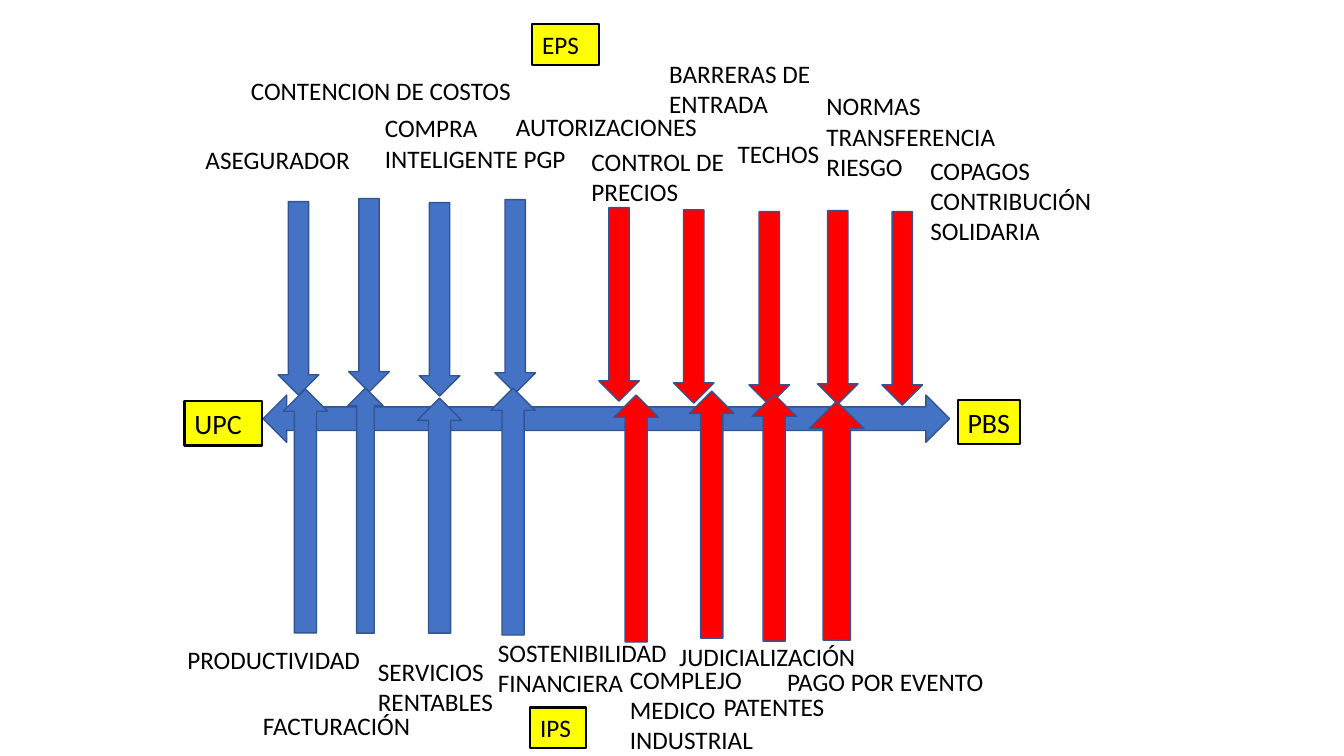
from dataclasses import dataclass

from pptx import Presentation
from pptx.dml.color import RGBColor
from pptx.enum.shapes import MSO_SHAPE
from pptx.enum.text import MSO_ANCHOR, MSO_AUTO_SIZE, PP_ALIGN
from pptx.util import Pt


@dataclass(frozen=True)
class Theme:
    font: str = "Calibri"
    label_size: float = 18
    end_size: float = 20
    ink: RGBColor = RGBColor(0x00, 0x00, 0x00)
    tag: RGBColor = RGBColor(0xFF, 0xFF, 0x00)
    blue: RGBColor = RGBColor(0x44, 0x72, 0xC4)
    red: RGBColor = RGBColor(0xFF, 0x00, 0x00)
    outline: RGBColor = RGBColor(0x32, 0x54, 0x91)
    arrow_line: float = 1
    tag_line: float = 1.5


@dataclass(frozen=True)
class Box:
    left: float
    top: float
    width: float
    height: float

    def inner(self, left, top, width, height):
        """Return a box placed relative to this one."""
        return Box(self.left + left, self.top + top, width, height)

    def lengths(self):
        return Pt(self.left), Pt(self.top), Pt(self.width), Pt(self.height)


THEME = Theme()
LINE_HEIGHT = 22
LABEL_PADDING = 7
LABEL_WIDTH = 147.5


def write_text(shape, text, size=THEME.label_size, color=THEME.ink, right_margin=7.2):
    frame = shape.text_frame
    frame.word_wrap = True
    frame.auto_size = MSO_AUTO_SIZE.SHAPE_TO_FIT_TEXT
    frame.vertical_anchor = MSO_ANCHOR.TOP
    frame.margin_right = Pt(right_margin)
    para = frame.paragraphs[0]
    para.alignment = PP_ALIGN.LEFT
    span = para.add_run()
    span.text = text
    span.font.name = THEME.font
    span.font.size = Pt(size)
    span.font.color.rgb = color


def add_block(page, kind, box, fill, line, line_width):
    shape = page.shapes.add_shape(kind, *box.lengths())
    shape.shadow.inherit = False
    shape.fill.solid()
    shape.fill.fore_color.rgb = fill
    shape.line.color.rgb = line
    shape.line.width = Pt(line_width)
    return shape


def add_arrow(page, kind, box, fill):
    return add_block(page, kind, box, fill, THEME.outline, THEME.arrow_line)


def add_tag(page, box, text, size=THEME.label_size):
    shape = add_block(page, MSO_SHAPE.RECTANGLE, box, THEME.tag, THEME.ink, THEME.tag_line)
    write_text(shape, text, size=size, right_margin=0)


def add_labels(page, box, labels):
    for text, left, top, lines, width in labels:
        place = box.inner(left, top, width, lines * LINE_HEIGHT + LABEL_PADDING)
        write_text(page.shapes.add_textbox(*place.lengths()), text)


def add_insurer_side(page, box):
    """Insurer measures pressing down on the axis."""
    blue_arrows = [(78.7, 127), (129.1, 124.8), (179.5, 127.7), (233.5, 125.6)]
    red_arrows = [(307.7, 131.3), (361, 132.8), (415, 134.2), (463.9, 133.5), (510, 134.2)]
    for fill, arrows in ((THEME.blue, blue_arrows), (THEME.red, red_arrows)):
        for left, top in arrows:
            add_arrow(page, MSO_SHAPE.DOWN_ARROW, box.inner(left, top, 29, 138.2), fill)

    add_tag(page, box.inner(260.2, 0.3, 47.5, 29), "EPS")
    add_labels(page, box, [
        ("ASEGURADOR", 19.7, 82.4, 1, 128.2),
        ("CONTENCION DE COSTOS", 52.1, 33.4, 1, 212.4),
        ("COMPRA INTELIGENTE PGP", 147.8, 60, 2, LABEL_WIDTH),
        ("AUTORIZACIONES", 241.4, 58.6, 1, LABEL_WIDTH),
        ("CONTROL DE PRECIOS", 295.4, 83.8, 2, LABEL_WIDTH),
        ("BARRERAS DE ENTRADA", 350.9, 21.2, 2, LABEL_WIDTH),
        ("TECHOS", 399.8, 78, 1, LABEL_WIDTH),
        ("NORMAS TRANSFERENCIA RIESGO", 463.2, 44.2, 3, LABEL_WIDTH),
        ("COPAGOS CONTRIBUCIÓN SOLIDARIA", 537.4, 90.3, 3, LABEL_WIDTH),
    ])


def add_axis(page, box):
    """Double arrow between the payment unit and the benefit plan."""
    add_arrow(page, MSO_SHAPE.LEFT_RIGHT_ARROW, box.inner(67.9, 0.2, 490.3, 33.8), THEME.blue)
    add_tag(page, box.inner(11.8, 4.6, 55.4, 31.7), "UPC", size=THEME.end_size)
    add_tag(page, box.inner(564, 3.8, 44.6, 31.7), "PBS", size=THEME.end_size)


def add_provider_side(page, box):
    """Provider pressures pushing up on the axis."""
    blue_arrows = [
        (82.3, 0.9, 31.7, 174.2),
        (128.4, 0.2, 25.2, 175),
        (178.1, 7.4, 31.7, 167.8),
        (230.6, 0.2, 31.7, 176.4),
    ]
    red_arrows = [
        (318.5, 5.2, 31.7, 176.4),
        (372.5, 2.4, 31.7, 176.4),
        (417.1, 4.5, 31.7, 176.4),
        (458.2, 9.6, 38.9, 170.6),
    ]
    for fill, arrows in ((THEME.blue, blue_arrows), (THEME.red, red_arrows)):
        for place in arrows:
            arrow = add_arrow(page, MSO_SHAPE.DOWN_ARROW, box.inner(*place), fill)
            arrow.rotation = 180

    add_tag(page, box.inner(258.7, 228.4, 39.6, 29), "IPS")
    add_labels(page, box, [
        ("PRODUCTIVIDAD", 6.7, 179.5, 1, LABEL_WIDTH),
        ("FACTURACIÓN", 60.7, 227, 1, LABEL_WIDTH),
        ("SERVICIOS RENTABLES", 142.8, 188.1, 2, LABEL_WIDTH),
        ("SOSTENIBILIDAD FINANCIERA", 228.5, 174.4, 2, LABEL_WIDTH),
        ("COMPLEJO MEDICO INDUSTRIAL", 322.8, 193.9, 3, LABEL_WIDTH),
        ("JUDICIALIZACIÓN", 358.1, 177.3, 1, LABEL_WIDTH),
        ("PATENTES", 389.8, 213.3, 1, LABEL_WIDTH),
        ("PAGO POR EVENTO", 435.1, 195.3, 1, 167.8),
    ])


def main():
    deck = Presentation()
    deck.slide_width = Pt(960)
    deck.slide_height = Pt(540)
    page = deck.slides.add_slide(deck.slide_layouts[6])

    # Stacked from back to front
    add_insurer_side(page, Box(120, 17, 690, 275))
    add_axis(page, Box(120, 282, 610, 38))
    add_provider_side(page, Box(120, 277, 610, 263))

    deck.save("out.pptx")


if __name__ == "__main__":
    main()
